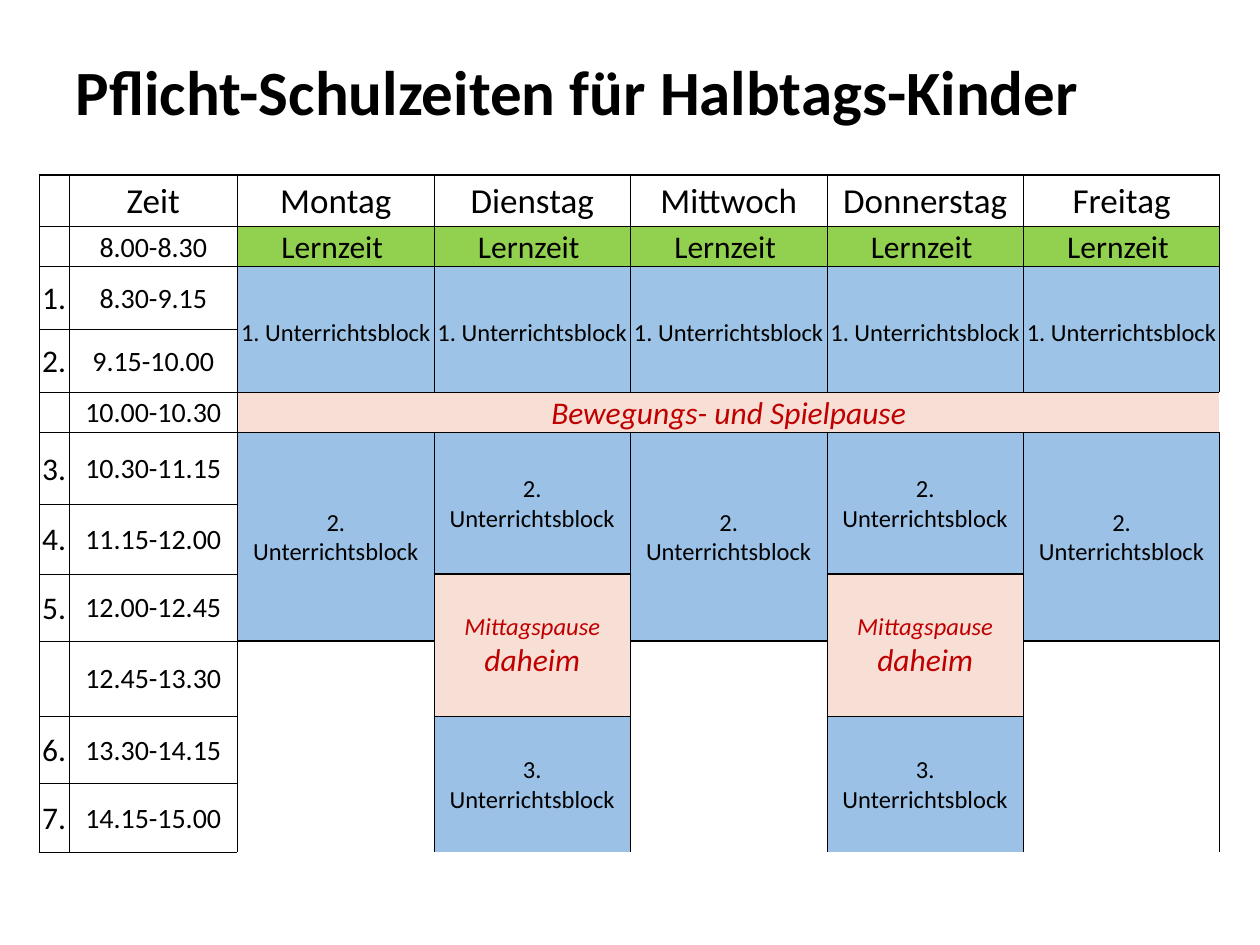
from dataclasses import dataclass

from lxml.etree import SubElement
from pptx import Presentation
from pptx.dml.color import RGBColor as Rgb
from pptx.enum.text import MSO_ANCHOR as Anchor, PP_ALIGN as Align
from pptx.oxml.ns import qn
from pptx.util import Cm, Pt


@dataclass(frozen=True)
class Theme:
    font: str = "Calibri"
    ink: str = "000000"
    accent: str = "C00000"
    green: str = "92D050"
    early_blue: str = "9DC3E6"
    late_blue: str = "9BC2E6"
    rose: str = "F7DFD5"
    white: str = "FFFFFF"
    title: int = 36
    header: int = 20
    large: int = 18
    time: int = 16
    block: int = 14
    thin: float = 0.5
    thick: float = 1


@dataclass
class Entry:
    """One visible cell: each paragraph is a list of (text, size) runs."""
    row: int
    col: int
    paras: list
    fill: str = ""
    rows: int = 1
    cols: int = 1
    pause: bool = False


THEME = Theme()
NBSP = " "
DAYS = ["Montag", "Dienstag", "Mittwoch", "Donnerstag", "Freitag"]
LONG_DAYS = ["Dienstag", "Donnerstag"]
PERIODS = [
    ("", "8.00-8.30"), ("1.", "8.30-9.15"), ("2.", "9.15-10.00"),
    ("", "10.00-10.30"), ("3.", "10.30-11.15"), ("4.", "11.15-12.00"),
    ("5.", "12.00-12.45"), ("", "12.45-13.30"), ("6.", "13.30-14.15"),
    ("7.", "14.15-15.00"),
]
COLUMN_WIDTHS = [0.6, 3.4] + [3.96] * len(DAYS)
ROW_HEIGHTS = [1.04, 0.8, 1.27, 1.27, 0.8, 1.45, 1.4, 1.35, 1.52, 1.35, 1.4]
THICK_LINES = {0, 1, 4, 5}  # horizontal grid lines, counted from the top


def lesson_block(row, col, number, rows):
    paras = [[(number, THEME.block)], [("Unterrichtsblock", THEME.block)]]
    return Entry(row, col, paras, THEME.late_blue, rows)


def day_entries(col, day):
    """Return the cells of one weekday, leaving out the shared break."""
    first_block = [("1. Unterrichtsblock", THEME.block), (NBSP, THEME.large)]
    entries = [
        Entry(0, col, [[(day, THEME.header)]]),
        Entry(1, col, [[("Lernzeit" + NBSP, THEME.large)]], THEME.green),
        Entry(2, col, [first_block], THEME.early_blue, rows=2),
    ]
    if day in LONG_DAYS:
        lunch = [[("Mittagspause", THEME.block)], [("daheim", THEME.large)]]
        return entries + [
            lesson_block(5, col, "2.", 2),
            Entry(7, col, lunch, THEME.rose, rows=2, pause=True),
            lesson_block(9, col, "3.", 2),
        ]
    return entries + [
        lesson_block(5, col, "2.", 3),
        Entry(8, col, [], THEME.white, rows=3),
    ]


def timetable_entries():
    entries = [Entry(0, 0, []), Entry(0, 1, [[("Zeit", THEME.header)]])]
    for row, (number, time) in enumerate(PERIODS, start=1):
        entries.append(Entry(row, 0, [[(number, THEME.large)]] if number else []))
        entries.append(Entry(row, 1, [[(time, THEME.time)]]))
    for col, day in enumerate(DAYS, start=2):
        entries += day_entries(col, day)
    pause = [[("Bewegungs- und Spielpause", THEME.large)]]
    entries.append(Entry(4, 2, pause, THEME.rose, cols=len(DAYS), pause=True))
    return entries


def add_border(cell, side, width):
    line = SubElement(cell._tc.get_or_add_tcPr(), qn(f"a:ln{side}"), w=str(Pt(width)))
    fill = SubElement(line, qn("a:solidFill"))
    SubElement(fill, qn("a:srgbClr"), val=THEME.ink)


def frame_entry(grid, entry):
    """Draw borders along the outer edges of the area the entry covers."""
    bottom, right = entry.row + entry.rows, entry.col + entry.cols
    for row in range(entry.row, bottom):
        for col in range(entry.col, right):
            edges = [
                ("L", col == entry.col, THEME.thin),
                ("R", col == right - 1, THEME.thin),
                ("T", row == entry.row, line_width(row)),
                ("B", row == bottom - 1, line_width(row + 1)),
            ]
            for side, is_outer, width in edges:
                if is_outer:
                    add_border(grid.cell(row, col), side, width)


def line_width(index):
    return THEME.thick if index in THICK_LINES else THEME.thin


def fill_entry(grid, entry):
    cell = grid.cell(entry.row, entry.col)
    if entry.rows * entry.cols > 1:
        cell.merge(grid.cell(entry.row + entry.rows - 1, entry.col + entry.cols - 1))
    frame_entry(grid, entry)
    if entry.fill:
        cell.fill.solid()
        cell.fill.fore_color.rgb = Rgb.from_string(entry.fill)
    else:
        cell.fill.background()
    cell.margin_left = cell.margin_right = cell.margin_top = Cm(0.03)
    cell.margin_bottom = 0
    cell.vertical_anchor = Anchor.MIDDLE

    frame = cell.text_frame
    for index, runs in enumerate(entry.paras):
        para = frame.add_paragraph() if index else frame.paragraphs[0]
        para.alignment = Align.CENTER
        style_font(para.font, runs[0][1], THEME.accent if entry.pause else THEME.ink)
        para.font.italic = entry.pause
        for text, size in runs:
            span = para.add_run()
            span.text = text
            if len(runs) > 1:
                span.font.size = Pt(size)


def style_font(font, size, color):
    font.name = THEME.font
    font.size = Pt(size)
    font.color.rgb = Rgb.from_string(color)


def place_title(page, left, top, width, height):
    box = page.shapes.title
    box.left, box.top, box.width, box.height = left, top, width, height
    box.text_frame.text = "Pflicht-Schulzeiten für Halbtags-Kinder"
    box.text_frame.vertical_anchor = Anchor.MIDDLE
    para = box.text_frame.paragraphs[0]
    para.alignment = Align.LEFT
    para.line_spacing = 0.9
    style_font(para.font, THEME.title, THEME.ink)
    para.font.bold = True


def place_timetable(page, left, top):
    width, height = Cm(sum(COLUMN_WIDTHS)), Cm(sum(ROW_HEIGHTS))
    grid = page.shapes.add_table(
        len(ROW_HEIGHTS), len(COLUMN_WIDTHS), left, top, width, height).table
    grid.first_row = grid.horz_banding = False
    for column, size in zip(grid.columns, COLUMN_WIDTHS):
        column.width = Cm(size)
    for row, size in zip(grid.rows, ROW_HEIGHTS):
        row.height = Cm(size)
    for entry in timetable_entries():
        fill_entry(grid, entry)


def main():
    deck = Presentation()
    deck.slide_width, deck.slide_height = Cm(25.4), Cm(19.05)
    page = deck.slides.add_slide(deck.slide_layouts[5])
    place_title(page, Cm(1.27), Cm(0.33), Cm(22.86), Cm(3.18))
    place_timetable(page, Cm(0.79), Cm(3.53))
    deck.save("out.pptx")


if __name__ == "__main__":
    main()
